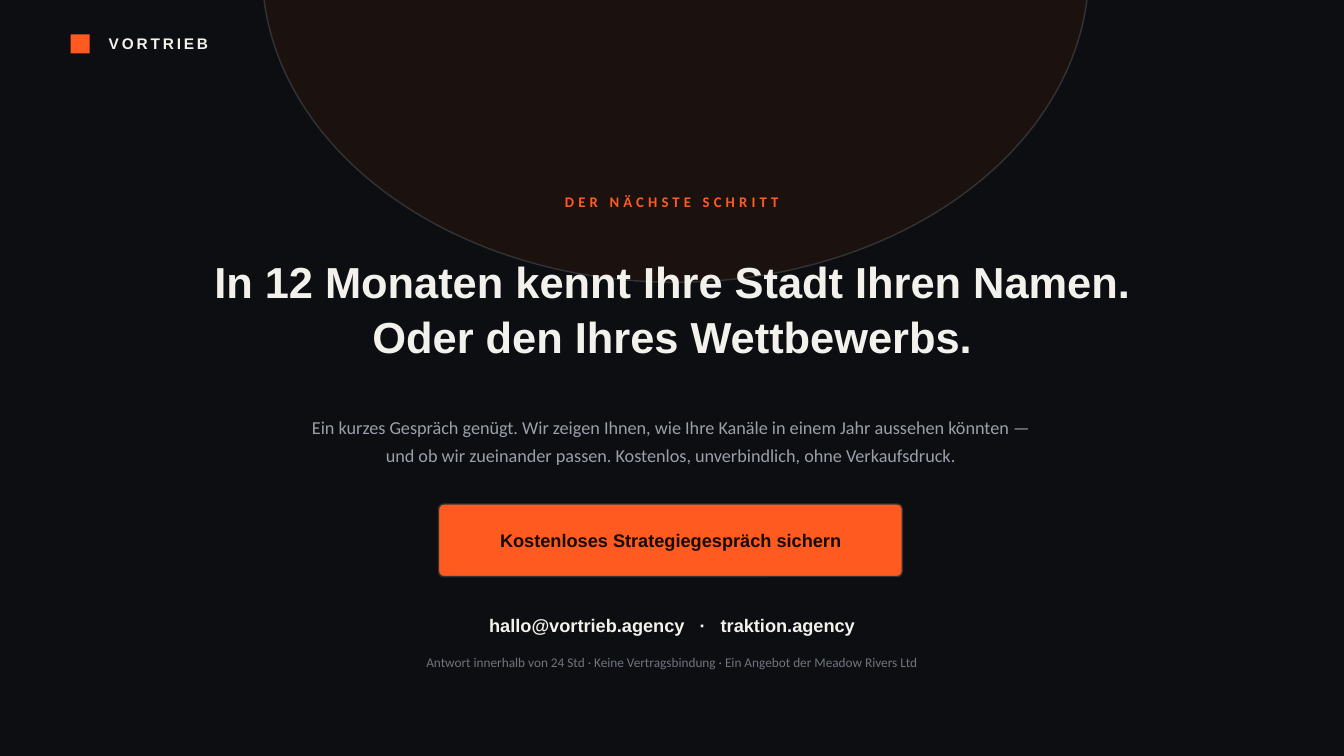
from lxml.etree import SubElement
from pptx import Presentation
from pptx.dml.color import RGBColor
from pptx.enum.shapes import MSO_SHAPE
from pptx.enum.text import MSO_ANCHOR, MSO_AUTO_SIZE, PP_ALIGN
from pptx.oxml.ns import qn
from pptx.util import Pt

PX = 9144
ORANGE, CREAM, EDGE = "FF5A1F", "F3F1EC", "333333"


def rgb(code):
    return RGBColor.from_string(code)


class Deck:
    head, body = "Arial", "Calibri"

    def __init__(self, wide, high, back):
        self.file = Presentation()
        self.file.slide_width, self.file.slide_height = wide * PX, high * PX
        self.slide = self.file.slides.add_slide(self.file.slide_layouts[5])
        fill = self.slide.background.fill
        fill.solid()
        fill.fore_color.rgb = rgb(back)

    def shape(self, kind, box, color, edge=None, alpha=None):
        item = self.slide.shapes.add_shape(kind, *(n * PX for n in box))
        item.shadow.inherit = False
        item.fill.solid()
        item.fill.fore_color.rgb = rgb(color)
        if alpha:
            tint = item.element.spPr.find(qn("a:solidFill")).find(qn("a:srgbClr"))
            SubElement(tint, qn("a:alpha")).set("val", str(alpha * 1000))
        if edge:
            item.line.color.rgb = rgb(edge)
            item.line.width = Pt(1)
        else:
            item.line.fill.background()
        return item

    def label(self, item, text, size, color, font, bold=False,
              align=PP_ALIGN.CENTER, lead=None, space=None):
        frame = item.text_frame
        frame.text = text
        frame.word_wrap = True
        frame.auto_size = MSO_AUTO_SIZE.NONE
        frame.vertical_anchor = MSO_ANCHOR.MIDDLE
        for para in frame.paragraphs:
            para.alignment = align
            if lead:
                para.line_spacing = lead
            for run in para.runs:
                self.style(run, size, color, font, bold, space)
        return frame

    def style(self, run, size, color, font, bold, space=None):
        run.font.size = Pt(size)
        run.font.name = font
        run.font.bold = bold
        run.font.color.rgb = rgb(color)
        if space:
            run._r.get_or_add_rPr().set("spc", str(round(space * 100)))

    def text(self, box, *args, **style):
        item = self.slide.shapes.add_textbox(*(n * PX for n in box))
        return self.label(item, *args, **style)

    def title(self, box, *args, **style):
        item = self.slide.shapes.title
        item.left, item.top, item.width, item.height = (n * PX for n in box)
        self.slide.shapes.element.append(item.element)
        return self.label(item, *args, **style)

    def button(self, box, *args, **style):
        item = self.shape(MSO_SHAPE.ROUNDED_RECTANGLE, box, ORANGE, EDGE)
        item.adjustments[0] = 0.07
        frame = self.label(item, *args, **style)
        frame.margin_left = frame.margin_right = 0
        frame.margin_top = frame.margin_bottom = 0

    def contact(self, box, mail, site):
        frame = self.text(box, mail, 13, CREAM, self.head, bold=True)
        for part, space in ((" ·", 7.2), (" " + site, None)):
            run = frame.paragraphs[0].add_run()
            run.text = part
            self.style(run, 13, CREAM, self.head, True, space)


def main():
    deck = Deck(1333, 750, "0D0E11")
    left, wide = 70, 1193
    deck.shape(MSO_SHAPE.RECTANGLE, (left, 34, 19, 19), ORANGE)
    deck.text((98, 26, 300, 34), "VORTRIEB", 11, CREAM, deck.head,
              bold=True, align=PP_ALIGN.LEFT, space=2)
    deck.shape(MSO_SHAPE.OVAL, (260, -340, 820, 620), "2A1710", EDGE, alpha=50)
    deck.text((left, 185, wide, 30), "DER NÄCHSTE SCHRITT", 10.5, ORANGE,
              deck.body, bold=True, space=3)
    deck.title((left, 230, wide, 150),
               "In 12 Monaten kennt Ihre Stadt Ihren Namen.\n"
               "Oder den Ihres Wettbewerbs.",
               31, CREAM, deck.head, bold=True, lead=1.05)
    deck.text((290, 395, 750, 80),
              "Ein kurzes Gespräch genügt. Wir zeigen Ihnen, wie Ihre Kanäle "
              "in einem Jahr aussehen könnten — und ob wir zueinander passen. "
              "Kostenlos, unverbindlich, ohne Verkaufsdruck.",
              13, "9AA0AA", deck.body, lead=1.25)
    deck.button((435, 500, 460, 72), "Kostenloses Strategiegespräch sichern",
                13, "160A04", deck.head, bold=True)
    deck.contact((left, 600, wide, 40), "hallo@vortrieb.agency", "traktion.agency")
    deck.text((left, 642, wide, 30),
              "Antwort innerhalb von 24 Std · Keine Vertragsbindung · "
              "Ein Angebot der Meadow Rivers Ltd",
              9.5, "6F747E", deck.body)
    deck.file.save("out.pptx")


if __name__ == "__main__":
    main()
